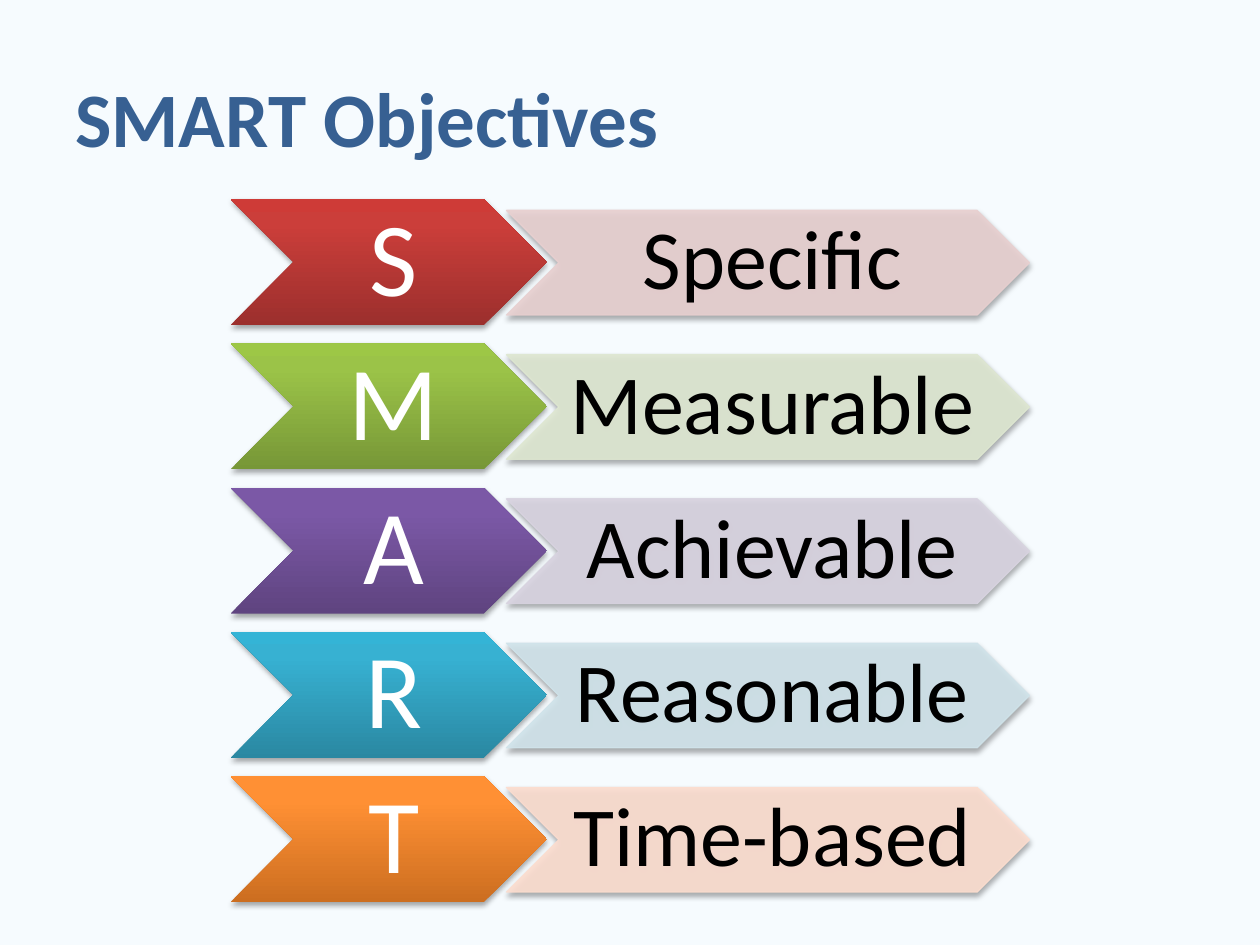
from copy import deepcopy

from pptx import Presentation
from pptx import util as u
from pptx.dml.color import RGBColor
from pptx.enum import shapes, text
from pptx.oxml import parse_xml
from pptx.oxml.ns import nsdecls, qn

BACK = RGBColor(0xF6, 0xFB, 0xFE)
BLUE = RGBColor(0x37, 0x60, 0x92)
WHITE = RGBColor(0xFF, 0xFF, 0xFF)
BLACK = RGBColor(0x00, 0x00, 0x00)

TOP, STEP = 1.58, 1.145
ROWS = [
    ("Specific", ("9C2F2D", "CB3E3A", "CE3B37"), "E8D0D0"),
    ("Measurable", ("779737", "9BC348", "9DC746"), "DEE7D1"),
    ("Achievable", ("5F4480", "7B58A6", "7C57A8"), "D8D3E0"),
    ("Reasonable", ("2A88A2", "37B1D2", "34B4D6"), "D0E3EA"),
    ("Time-based", ("CC6E20", "FF9034", "FF9136"), "FCDDCF"),
]


class Deck:
    """Draws styled elements on the current slide."""

    font = "Calibri"
    stops = (0, 0.8, 1)
    alpha = 90000

    def __init__(self, slide):
        self.slide = slide
        fill = slide.background.fill
        fill.solid()
        fill.fore_color.rgb = BACK

    def label(self, shape, words, align, inset, **style):
        frame = shape.text_frame
        left, top, right, base = map(u.Inches, inset)
        form = {
            "word_wrap": True,
            "vertical_anchor": text.MSO_ANCHOR.MIDDLE,
            "margin_left": left,
            "margin_top": top,
            "margin_right": right,
            "margin_bottom": base,
        }
        for name, value in form.items():
            setattr(frame, name, value)
        para = frame.paragraphs[0]
        para.alignment = align
        run = para.add_run()
        run.text = words
        run.font.name = self.font
        run.font.color.rgb = style.pop("color")
        for name, value in style.items():
            setattr(run.font, name, value)
        return para

    def title(self, words, *box):
        shape = self.slide.shapes.add_textbox(*map(u.Inches, box))
        self.label(shape, words, text.PP_ALIGN.LEFT, (0.1, 0.05, 0.1, 0.05),
                   size=u.Pt(44), bold=True, color=BLUE)

    def arrow(self, words, box, inset, size, color):
        shape = self.slide.shapes.add_shape(
            shapes.MSO_SHAPE.CHEVRON, *map(u.Inches, box))
        para = self.label(shape, words, text.PP_ALIGN.CENTER, inset,
                          size=u.Pt(size), color=color)
        para.line_spacing = 0.9
        return shape

    def shade(self, shape):
        shape.shadow.inherit = False
        shape._element.spPr.find(qn("a:effectLst")).append(parse_xml(
            f'<a:outerShdw {nsdecls("a")} blurRad="40000" dist="23000" '
            'dir="5400000" rotWithShape="0"><a:srgbClr val="000000">'
            '<a:alpha val="35000"/></a:srgbClr></a:outerShdw>'))

    def letter(self, words, top, hues):
        shape = self.arrow(words, (1.83, top, 2.51, 1),
                           (0.08, 0.04, 0, 0.04), 60, WHITE)
        fill = shape.fill
        fill.gradient()
        fill.gradient_angle = 90
        stops = shape._element.spPr.find(qn("a:gradFill")).find(qn("a:gsLst"))
        stops.append(deepcopy(stops[-1]))
        for stop, place, hue in zip(fill.gradient_stops, self.stops, hues):
            stop.position = place
            stop.color.rgb = RGBColor.from_string(hue)
        shape.line.fill.background()
        self.shade(shape)

    def meaning(self, words, top, hue):
        shape = self.arrow(words, (4.02, top, 4.15, 0.83),
                           (0.07, 0.03, 0, 0.03), 48, BLACK)
        shape.line.width = u.Pt(0.75)
        for fill in (shape.fill, shape.line.fill):
            fill.solid()
            fill.fore_color.rgb = RGBColor.from_string(hue)
        for node in shape._element.spPr.iter(qn("a:srgbClr")):
            node.append(parse_xml(
                f'<a:alpha {nsdecls("a")} val="{self.alpha}"/>'))
        self.shade(shape)


def main():
    show = Presentation()
    show.slide_width, show.slide_height = u.Inches(10), u.Inches(7.5)
    deck = Deck(show.slides.add_slide(show.slide_layouts[6]))
    deck.title("SMART Objectives", 0.5, 0.3, 9, 1.25)
    for row, (words, hues, pale) in enumerate(ROWS):
        top = TOP + row * STEP
        deck.letter(words[0], top, hues)
        deck.meaning(words, top + 0.09, pale)
    show.save("out.pptx")


if __name__ == "__main__":
    main()
